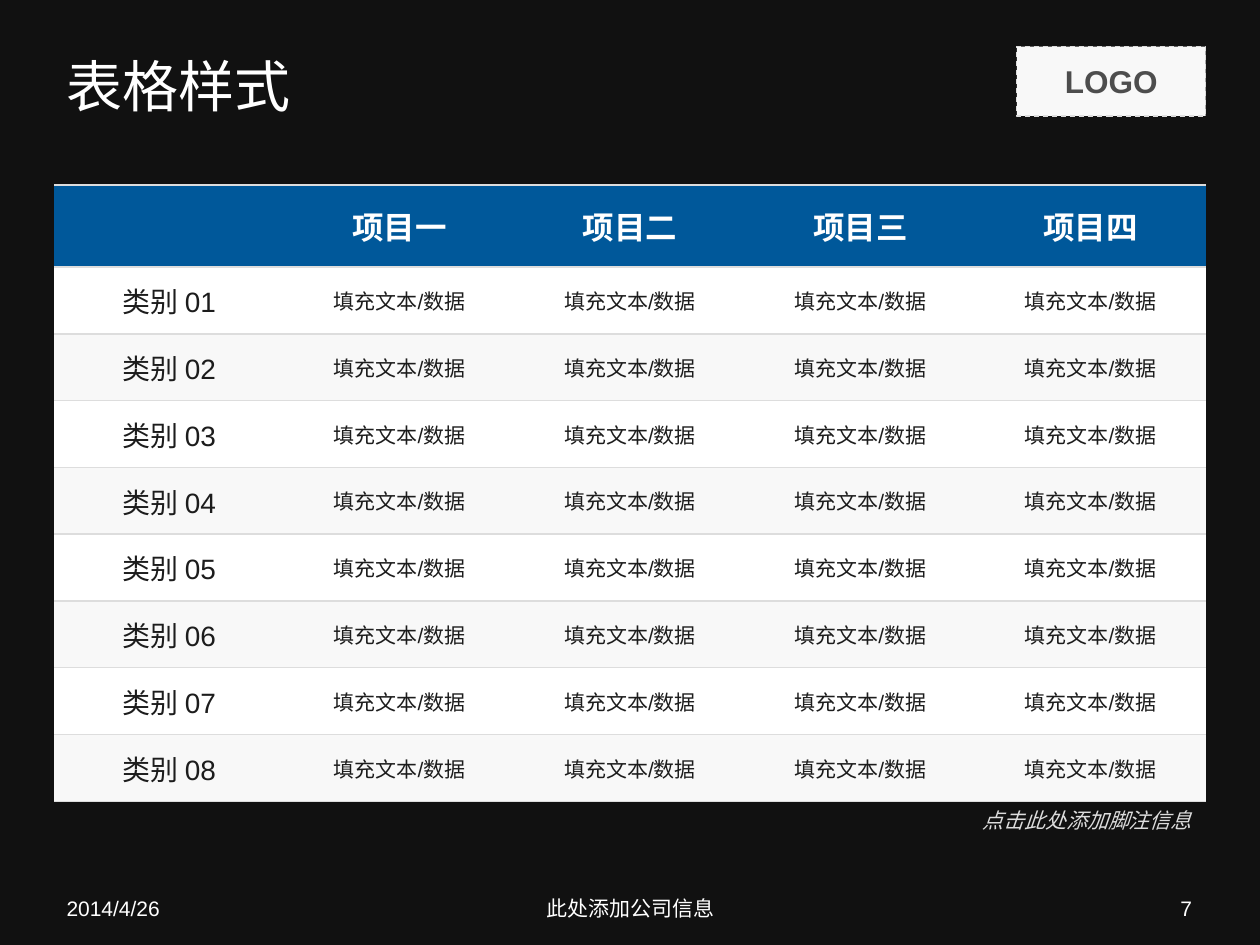
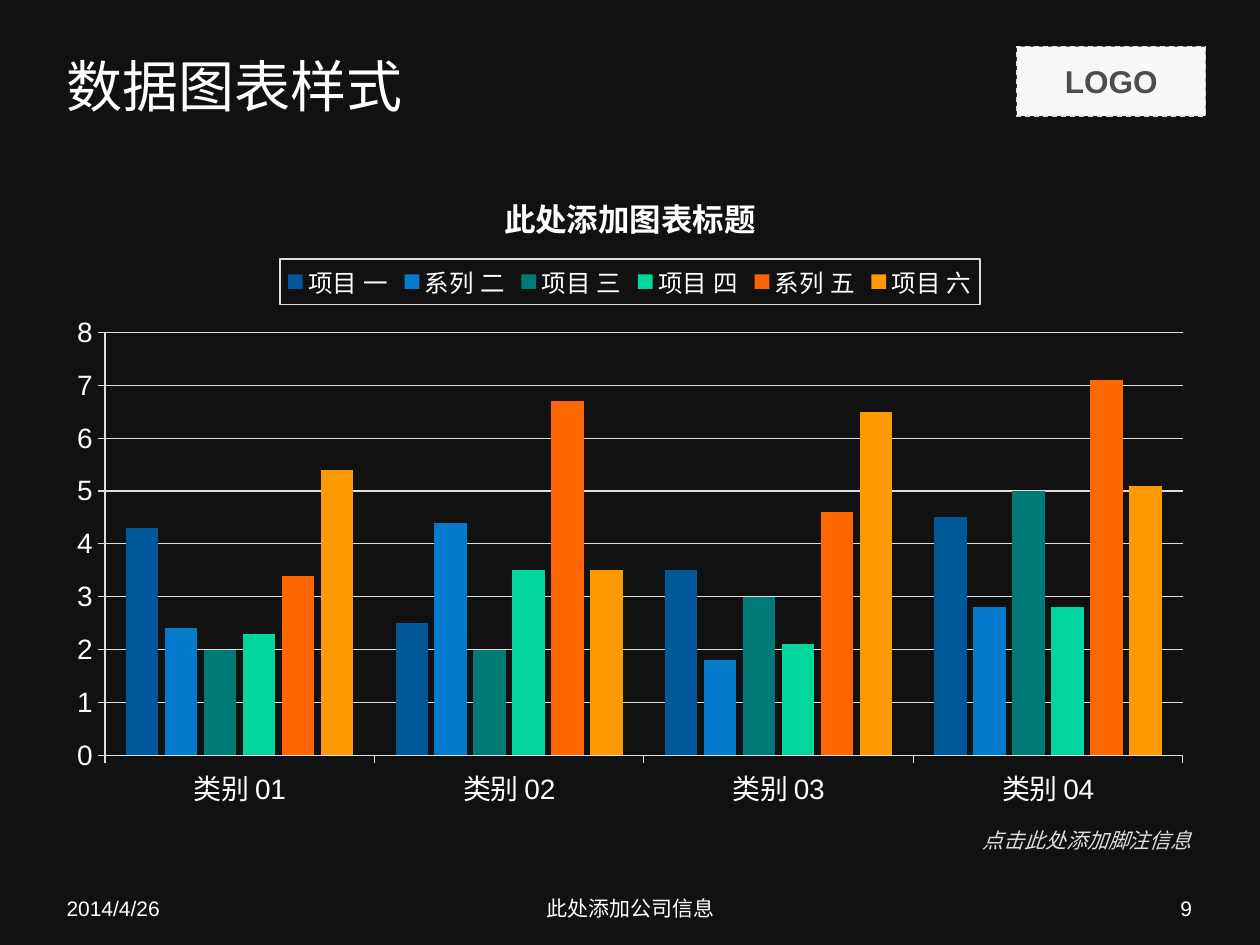
"""Build a table slide and a column chart slide on a shared dark theme."""
from pptx import Presentation
from pptx.chart.data import CategoryChartData
from pptx.dml.color import RGBColor
from pptx.enum.chart import XL_CHART_TYPE, XL_LEGEND_POSITION, XL_TICK_MARK
from pptx.enum.dml import MSO_LINE
from pptx.enum.shapes import MSO_SHAPE
from pptx.enum.text import MSO_ANCHOR as ANCHOR, MSO_AUTO_SIZE as AUTO, PP_ALIGN as ALIGN
from pptx.oxml import parse_xml
from pptx.oxml.ns import nsdecls, qn
from pptx.util import Inches, Pt

BLACK = RGBColor(0x11, 0x11, 0x11)
WHITE = RGBColor(0xFF, 0xFF, 0xFF)
INK = RGBColor(0x1C, 0x1C, 0x1C)
GREY = RGBColor(0x4D, 0x4D, 0x4D)
SILVER = RGBColor(0xDD, 0xDD, 0xDD)
PALE = RGBColor(0xF8, 0xF8, 0xF8)
NAVY = RGBColor(0x00, 0x58, 0x9A)
BLUE = RGBColor(0x04, 0x7B, 0xCC)
TEAL = RGBColor(0x00, 0x7A, 0x77)
MINT = RGBColor(0x00, 0xD6, 0x9E)
ORANGE = RGBColor(0xFF, 0x66, 0x00)
AMBER = RGBColor(0xFF, 0x99, 0x00)

LEFT, WIDTH = Inches(0.43), Inches(9.14)
NO_STYLE = "{2D5ABB26-0587-4C30-8999-92F81FD0307C}"


def write(frame, text, size=12, color=WHITE, font="Arial", align=ALIGN.LEFT,
          bold=False, italic=False):
    """Put one formatted paragraph into a text frame."""
    paragraph = frame.paragraphs[0]
    paragraph.alignment = align
    run = paragraph.add_run()
    run.text = text
    run.font.size, run.font.name = Pt(size), font
    run.font.bold, run.font.italic = bold, italic
    run.font.color.rgb = color


def rule_cell(cell, *edges):
    """Draw thin silver borders on the named edges of a table cell."""
    properties = cell._tc.get_or_add_tcPr()
    for position, edge in enumerate(edges):
        properties.insert(position, parse_xml(
            f'<a:{edge} {nsdecls("a")} w="12700"><a:solidFill>'
            f'<a:srgbClr val="{SILVER}"/></a:solidFill></a:{edge}>'))


prs = Presentation()
prs.slide_width, prs.slide_height = Inches(10), Inches(7.5)
background = prs.slide_master.background.fill
background.solid()
background.fore_color.rgb = BLACK

slides = []
for heading, page, footnote_top in [("表格样式", "7", 6.36), ("数据图表样式", "9", 6.52)]:
    slide = prs.slides.add_slide(prs.slide_layouts[5])
    slides.append(slide)

    logo = slide.shapes.add_shape(MSO_SHAPE.RECTANGLE, Inches(8.07), Inches(0.37),
                                  Inches(1.5), Inches(0.55))
    logo.shadow.inherit = False
    logo.fill.solid()
    logo.fill.fore_color.rgb = PALE
    logo.line.color.rgb = SILVER
    logo.line.width = Pt(0.75)
    logo.line.dash_style = MSO_LINE.DASH
    logo.text_frame.vertical_anchor = ANCHOR.MIDDLE
    write(logo.text_frame, "LOGO", size=18, color=GREY, align=ALIGN.CENTER, bold=True)

    title = slide.shapes.title
    title.left, title.top, title.width, title.height = LEFT, Inches(0.28), WIDTH, Inches(0.79)
    title.text_frame.auto_size = AUTO.NONE
    title.text_frame.vertical_anchor = ANCHOR.MIDDLE
    write(title.text_frame, heading, size=32, font="Montserrat")

    for text, left, width, align in [("2014/4/26", 0.43, 2.33, ALIGN.LEFT),
                                     ("此处添加公司信息", 3.42, 3.17, ALIGN.CENTER),
                                     (page, 7.23, 2.33, ALIGN.RIGHT)]:
        footer = slide.shapes.add_textbox(Inches(left), Inches(7.06),
                                          Inches(width), Inches(0.29)).text_frame
        footer.word_wrap = True
        footer.vertical_anchor = ANCHOR.MIDDLE
        write(footer, text, align=align)

    footnote = slide.shapes.add_textbox(Inches(7.68), Inches(footnote_top),
                                        Inches(1.88), Inches(0.3)).text_frame
    footnote.word_wrap = False
    footnote.auto_size = AUTO.SHAPE_TO_FIT_TEXT
    write(footnote, "点击此处添加脚注信息", color=SILVER, align=ALIGN.RIGHT, italic=True)

table_slide, chart_slide = slides

rows = [["", "项目一", "项目二", "项目三", "项目四"]]
rows += [[f"类别 {number:02}"] + ["填充文本/数据"] * 4 for number in range(1, 9)]
table = table_slide.shapes.add_table(len(rows), len(rows[0]), LEFT, Inches(1.47),
                                     WIDTH, Inches(4.88)).table
table._tbl.tblPr.find(qn("a:tableStyleId")).text = NO_STYLE
for r, row in enumerate(rows):
    table.rows[r].height = Inches(0.53 if r else 0.65)
    for c, text in enumerate(row):
        cell = table.cell(r, c)
        cell.vertical_anchor = ANCHOR.MIDDLE
        cell.fill.solid()
        if r == 0:
            cell.fill.fore_color.rgb = NAVY
            look = {"size": 18, "color": WHITE, "bold": True}
        else:
            cell.fill.fore_color.rgb = WHITE if r % 2 else PALE
            look = {"size": 12 if c else 16, "color": INK}
        if text:
            write(cell.text_frame, text, align=ALIGN.CENTER, **look)
        rule_cell(cell, "lnT", "lnB")

projects = [
    ("项目 一", (4.3, 2.5, 3.5, 4.5), NAVY),
    ("系列 二", (2.4, 4.4, 1.8, 2.8), BLUE),
    ("项目 三", (2, 2, 3, 5), TEAL),
    ("项目 四", (2.3, 3.5, 2.1, 2.8), MINT),
    ("系列 五", (3.4, 6.7, 4.6, 7.1), ORANGE),
    ("项目 六", (5.4, 3.5, 6.5, 5.1), AMBER),
]
data = CategoryChartData()
data.categories = [f"类别 {number:02}" for number in range(1, 5)]
for name, values, _ in projects:
    data.add_series(name, values)
chart = chart_slide.shapes.add_chart(XL_CHART_TYPE.COLUMN_CLUSTERED, LEFT, Inches(1.31),
                                     WIDTH, Inches(5.2), data).chart
chart.font.size, chart.font.name = Pt(18), "Arial"
chart.font.color.rgb = WHITE
chart.has_title = True
write(chart.chart_title.text_frame, "此处添加图表标题", size=18, align=ALIGN.CENTER, bold=True)

columns = chart.plots[0]
columns.gap_width, columns.overlap, columns.vary_by_categories = 130, -20, False
for series, (_, _, color) in zip(columns.series, projects):
    series.format.fill.solid()
    series.format.fill.fore_color.rgb = color

values_axis = chart.value_axis
values_axis.minimum_scale, values_axis.maximum_scale, values_axis.major_unit = 0, 8, 1
for axis in (chart.category_axis, values_axis):
    axis.major_tick_mark = XL_TICK_MARK.OUTSIDE
    axis.tick_labels.font.size = Pt(16)
    axis.tick_labels.font.color.rgb = WHITE
for line in (chart.category_axis.format.line, values_axis.format.line,
             values_axis.major_gridlines.format.line):
    line.color.rgb = SILVER
    line.width = Pt(0.75)

chart.has_legend = True
legend = chart.legend
legend.position = XL_LEGEND_POSITION.TOP
legend.include_in_layout = False
legend.font.size = Pt(14)
legend.font.color.rgb = WHITE
legend._element.find(qn("c:txPr")).addprevious(parse_xml(
    f'<c:spPr {nsdecls("c", "a")}><a:ln w="9525"><a:solidFill>'
    f'<a:srgbClr val="{SILVER}"/></a:solidFill></a:ln></c:spPr>'))

prs.save("out.pptx")
